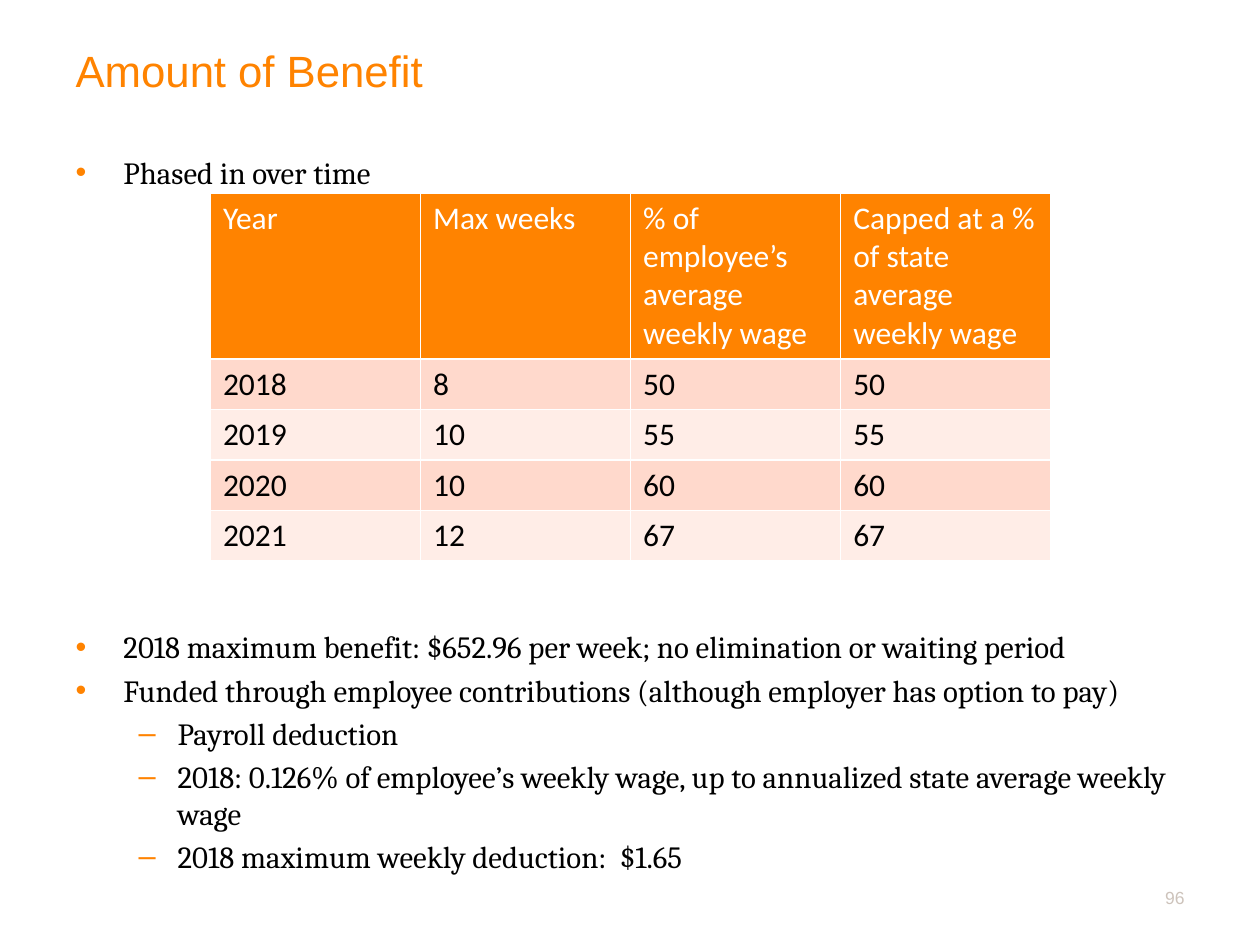
"""Build the "Amount of Benefit" slide with its phase-in table and funding notes."""
from dataclasses import dataclass

from lxml.etree import SubElement
from pptx import Presentation
from pptx.dml.color import RGBColor
from pptx.enum.text import MSO_ANCHOR as Anchor, MSO_AUTO_SIZE as AutoSize, PP_ALIGN as Align
from pptx.oxml.ns import qn
from pptx.util import Inches, Pt

COLORS = {
    "accent": "FF8300",
    "text": "000000",
    "light": "FFFFFF",
    "band_dark": "FFD9CC",
    "band_pale": "FFEDE7",
    "page": "CDC3BB",
}
HEADERS = ("Year", "Max weeks", "% of employee’s average weekly wage",
           "Capped at a % of state average weekly wage")
PHASES = ((2018, 8, 50, 50), (2019, 10, 55, 55), (2020, 10, 60, 60), (2021, 12, 67, 67))


@dataclass(frozen=True)
class Level:
    mark: str
    margin: float
    hanging: float


@dataclass(frozen=True)
class Point:
    text: str
    level: int = 0
    before: float = 3.5


LEVELS = (Level("•", 0.38, 0.38), Level("–", 0.81, 0.31))
POINTS = (
    Point("Phased in over time", before=0),
    Point("2018 maximum benefit: $652.96 per week; no elimination or waiting period", before=250),
    Point("Funded through employee contributions (although employer has option to pay)"),
    Point("Payroll deduction", 1),
    Point("2018: 0.126% of employee’s weekly wage, up to annualized state average weekly wage", 1),
    Point("2018 maximum weekly deduction:  $1.65", 1),
)


def place(shape, left: float, top: float, width: float, height: float) -> None:
    shape.left, shape.top = Inches(left), Inches(top)
    shape.width, shape.height = Inches(width), Inches(height)


def style(paragraph, face: str, size: float, color: str) -> None:
    for run in paragraph.runs:
        run.font.name, run.font.size, run.font.bold = face, Pt(size), False
        run.font.color.rgb = RGBColor.from_string(COLORS[color])


def write_point(paragraph, point: Point) -> None:
    level = LEVELS[point.level]
    paragraph.text = point.text
    paragraph.level = point.level
    paragraph.alignment = Align.LEFT
    paragraph.space_before = Pt(point.before)
    props = paragraph._p.get_or_add_pPr()
    props.set("marL", str(Inches(level.margin)))
    props.set("indent", str(-Inches(level.hanging)))
    bullet_color = SubElement(props, qn("a:buClr"))
    SubElement(bullet_color, qn("a:srgbClr"), val=COLORS["accent"])
    SubElement(props, qn("a:buFont"), typeface="Arial")
    SubElement(props, qn("a:buChar"), char=level.mark)
    style(paragraph, "Cambria", 17.6, "text")


def write_cell(cell, text: str, fill: str, color: str) -> None:
    cell.text = text
    cell.fill.solid()
    cell.fill.fore_color.rgb = RGBColor.from_string(COLORS[fill])
    style(cell.text_frame.paragraphs[0], "Calibri", 18, color)


def add_title(slide) -> None:
    title = slide.shapes.title
    place(title, 0.5, 0.3, 9, 1.25)
    title.text_frame.text = "Amount of Benefit"
    title.text_frame.vertical_anchor = Anchor.TOP
    title.text_frame.auto_size = AutoSize.NONE
    heading = title.text_frame.paragraphs[0]
    heading.alignment = Align.LEFT
    style(heading, "Arial", 25, "accent")


def add_points(slide) -> None:
    body = slide.placeholders[1]
    place(body, 0.5, 1.17, 9, 5.34)
    frame = body.text_frame
    frame.auto_size = AutoSize.NONE
    for index, point in enumerate(POINTS):
        write_point(frame.add_paragraph() if index else frame.paragraphs[0], point)


def add_page_number(slide) -> None:
    page = slide.shapes.add_textbox(Inches(9), Inches(6.92), Inches(0.5), Inches(0.4))
    page.text_frame.text = "96"
    page.text_frame.word_wrap = True
    page.text_frame.vertical_anchor = Anchor.MIDDLE
    number = page.text_frame.paragraphs[0]
    number.alignment = Align.RIGHT
    style(number, "Arial", 10, "page")


def add_phase_table(slide) -> None:
    table = slide.shapes.add_table(len(PHASES) + 1, len(HEADERS), Inches(1.67), Inches(1.53),
                                   Inches(6.67), Inches(2.94)).table
    for row_index, values in enumerate((HEADERS, *PHASES)):
        is_header = row_index == 0
        band = "band_dark" if row_index % 2 else "band_pale"
        table.rows[row_index].height = Inches(1.32 if is_header else 0.4)
        for cell, value in zip(table.rows[row_index].cells, values):
            write_cell(cell, str(value), "accent" if is_header else band,
                       "light" if is_header else "text")


def main() -> None:
    deck = Presentation()
    deck.slide_width, deck.slide_height = Inches(10), Inches(7.5)
    slide = deck.slides.add_slide(deck.slide_layouts[1])
    add_title(slide)
    add_points(slide)
    add_page_number(slide)
    add_phase_table(slide)
    deck.save("out.pptx")


if __name__ == "__main__":
    main()
